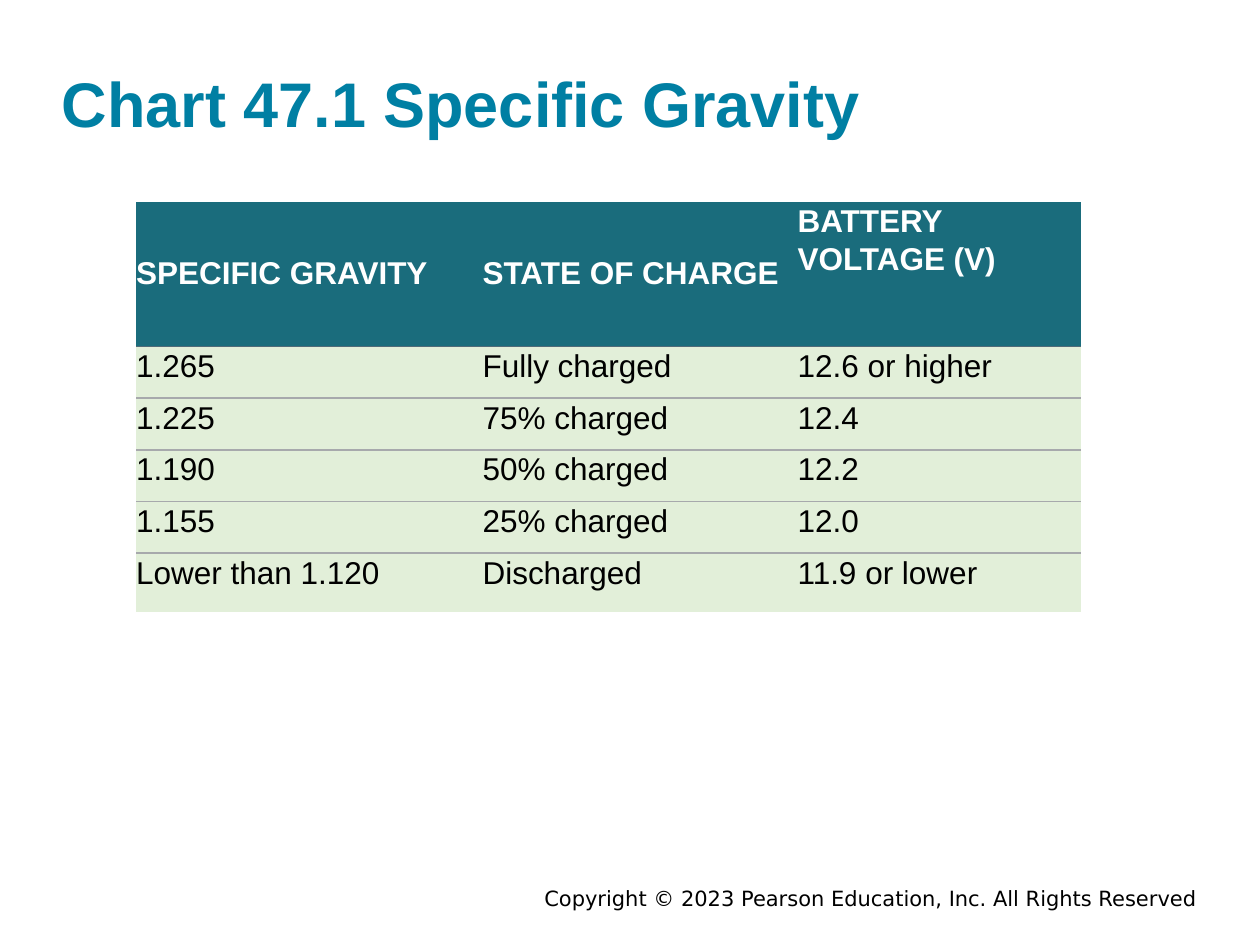
"""Build the specific gravity slide with its battery table."""
import pptx
import pptx.dml.color
import pptx.enum.text
import pptx.oxml
import pptx.oxml.ns
import pptx.util

Inches, Pt = pptx.util.Inches, pptx.util.Pt
ALIGN, ANCHOR = pptx.enum.text.PP_ALIGN, pptx.enum.text.MSO_ANCHOR

COLORS = {"title": "007FA3", "head": "1A6C7C", "body": "E2EFD9", "rule": "A7A9AC",
          "edge": "4F6B79", "white": "FFFFFF", "black": "000000"}
TITLE = "Chart 47.1 Specific Gravity"
FOOTER = "Copyright © 2023 Pearson Education, Inc. All Rights Reserved"
ROWS = [
    ("SPECIFIC GRAVITY", "STATE OF CHARGE", "BATTERY VOLTAGE (V)"),
    ("1.265", "Fully charged", "12.6 or higher"),
    ("1.225", "75% charged", "12.4"),
    ("1.190", "50% charged", "12.2"),
    ("1.155", "25% charged", "12.0"),
    ("Lower than 1.120", "Discharged", "11.9 or lower"),
]
WIDTHS = [2.75, 2.5, 2.25]
HEIGHTS = [1.15] + [0.41] * 4 + [0.47]
HEAD_TOPS = [0.41, 0.41, 0]


def add_run(para, text, size, color, bold=False, font="Arial"):
    run = para.add_run()
    run.text = text
    run.font.name, run.font.size, run.font.bold = font, Pt(size), bold
    run.font.color.rgb = pptx.dml.color.RGBColor.from_string(COLORS[color])


def add_text(slide, area):
    frame = slide.shapes.add_textbox(*map(Inches, area)).text_frame
    frame.word_wrap = True
    return frame


def set_lines(cell, top, base):
    props = cell._tc.get_or_add_tcPr()
    sides = {"L": None, "R": None, "T": top, "B": base}
    for spot, (side, color) in enumerate(sides.items()):
        fill = (f'<a:solidFill><a:srgbClr val="{COLORS[color]}"/></a:solidFill>'
                if color else "<a:noFill/>")
        props.insert(spot, pptx.oxml.parse_xml(
            f'<a:ln{side} {pptx.oxml.ns.nsdecls("a")} w="{Pt(1)}">{fill}</a:ln{side}>'))


def fill_cell(cell, text, row, col):
    head = row == 0
    cell.margin_left = cell.margin_right = cell.margin_bottom = 0
    cell.margin_top = Inches(HEAD_TOPS[col] if head else 0)
    cell.fill.solid()
    cell.fill.fore_color.rgb = pptx.dml.color.RGBColor.from_string(
        COLORS["head" if head else "body"])
    edges = [None, "edge"] + ["rule"] * (len(ROWS) - 2) + [None]
    set_lines(cell, edges[row], edges[row + 1])
    para = cell.text_frame.paragraphs[0]
    para.line_spacing, para.space_after = 1.07, Pt(8)
    add_run(para, text, 18, "white" if head else "black", head)


def add_grid(slide):
    table = slide.shapes.add_table(
        len(ROWS), len(WIDTHS), Inches(1.08), Inches(1.6),
        Inches(sum(WIDTHS)), Inches(sum(HEIGHTS))).table
    table.horz_banding = False
    for col, width in enumerate(WIDTHS):
        table.columns[col].width = Inches(width)
    for row, (height, texts) in enumerate(zip(HEIGHTS, ROWS)):
        table.rows[row].height = Inches(height)
        for col, text in enumerate(texts):
            fill_cell(table.cell(row, col), text, row, col)


def main():
    deck = pptx.Presentation()
    deck.slide_width, deck.slide_height = Inches(10), Inches(7.5)
    slide = deck.slides.add_slide(deck.slide_layouts[6])

    foot = add_text(slide, (1.77, 6.98, 7.83, 0.3)).paragraphs[0]
    foot.alignment = ALIGN.RIGHT
    add_run(foot, FOOTER, 12, "black", font="DejaVu Sans")

    title = add_text(slide, (0.49, 0.45, 9, 0.71))
    title.margin_left = title.margin_right = 0
    title.vertical_anchor = ANCHOR.BOTTOM
    add_run(title.paragraphs[0], TITLE, 36, "title", True)

    add_grid(slide)
    deck.save("out.pptx")


if __name__ == "__main__":
    main()
